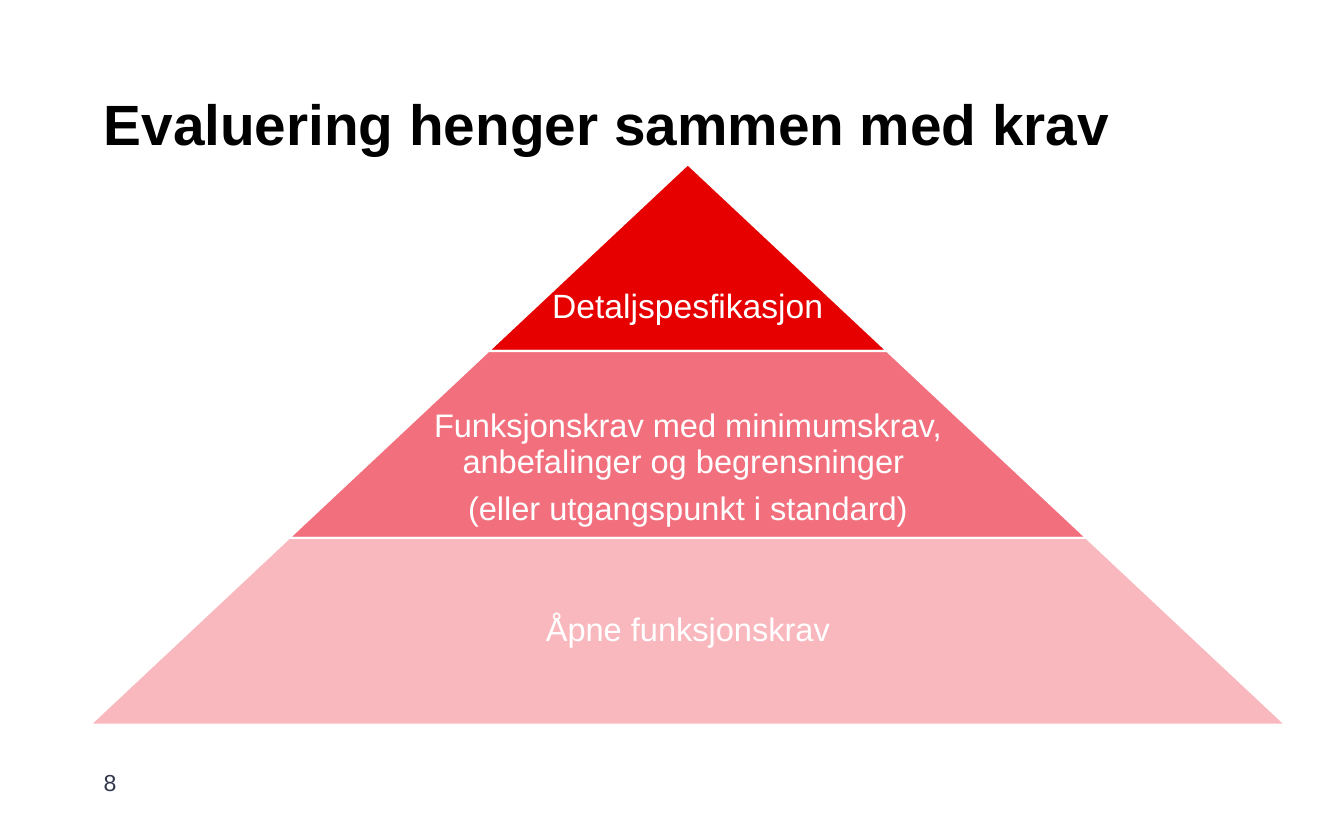
from dataclasses import dataclass

from pptx import Presentation
from pptx.dml.color import RGBColor
from pptx.enum.shapes import MSO_SHAPE
from pptx.enum.text import MSO_ANCHOR, MSO_AUTO_SIZE, PP_ALIGN
from pptx.slide import Slide
from pptx.text.text import TextFrame
from pptx.util import Cm, Pt

COLOURS = {
    "title": "000000",
    "number": "32374B",
    "white": "FFFFFF",
    "detail": "E60000",
    "functional": "F2707D",
    "open": "F8B8BE",
}
FONT = "Arial"
LEFT = 3.02
PYRAMID_TOP = 5.51
PYRAMID_WIDTH = 40.13
TIER_HEIGHT = 6.27
TITLE_MARGINS = (0.46, 0.23, 0.46, 0.23)


@dataclass(frozen=True)
class Tier:
    lines: tuple[str, ...]
    colour: str
    size: int
    text_share: float  # text width as a share of the tier width
    bottom_margin: float


TIERS = (
    Tier(("Detaljspesfikasjon",), "detail", 32, 1, 0.84),
    Tier(
        (
            "Funksjonskrav med minimumskrav, anbefalinger og begrensninger ",
            "(eller utgangspunkt i standard)",
        ),
        "functional", 31, 0.65, 0.33,
    ),
    Tier(("Åpne funksjonskrav",), "open", 31, 0.65, 2.57),
)


def colour(name: str) -> RGBColor:
    return RGBColor.from_string(COLOURS[name])


def set_frame(frame: TextFrame, anchor: MSO_ANCHOR,
              margins: tuple[float, float, float, float]) -> None:
    """Set wrapping, anchor and margins (left, top, right, bottom in cm)."""
    frame.word_wrap = True
    frame.auto_size = MSO_AUTO_SIZE.NONE
    frame.vertical_anchor = anchor
    (frame.margin_left, frame.margin_top,
     frame.margin_right, frame.margin_bottom) = map(Cm, margins)


def write_lines(frame: TextFrame, lines: tuple[str, ...], size: int, ink: str,
                align: PP_ALIGN = PP_ALIGN.LEFT, bold: bool = False,
                spacing: float = 1.0) -> None:
    for index, line in enumerate(lines):
        para = frame.add_paragraph() if index else frame.paragraphs[0]
        para.alignment = align
        para.line_spacing = spacing
        para.space_before = Pt(12 if index else 0)
        span = para.add_run()
        span.text = line
        span.font.name = FONT
        span.font.size = Pt(size)
        span.font.bold = bold
        span.font.color.rgb = colour(ink)


def add_title(page: Slide, text: str) -> None:
    title = page.shapes.title
    title.left, title.top, title.width, title.height = map(
        Cm, (LEFT, 2.54, 39.83, 2.97))
    set_frame(title.text_frame, MSO_ANCHOR.BOTTOM, TITLE_MARGINS)
    write_lines(title.text_frame, (text,), 54, "title", bold=True)


def add_tier(page: Slide, tier: Tier, index: int) -> None:
    width = PYRAMID_WIDTH * (index + 1) / len(TIERS)
    slope = PYRAMID_WIDTH / len(TIERS) / 2
    centre = LEFT + PYRAMID_WIDTH / 2
    top = PYRAMID_TOP + index * TIER_HEIGHT

    band = page.shapes.add_shape(
        MSO_SHAPE.TRAPEZOID, Cm(centre - width / 2), Cm(top),
        Cm(width), Cm(TIER_HEIGHT))
    band.adjustments[0] = slope / TIER_HEIGHT
    band.shadow.inherit = False
    band.fill.solid()
    band.fill.fore_color.rgb = colour(tier.colour)
    band.line.color.rgb = colour("white")
    band.line.width = Pt(2)

    text_width = width * tier.text_share
    box = page.shapes.add_textbox(
        Cm(centre - text_width / 2), Cm(top), Cm(text_width), Cm(TIER_HEIGHT))
    set_frame(box.text_frame, MSO_ANCHOR.BOTTOM,
              (0.1, 0.1, 0.1, tier.bottom_margin))
    write_lines(box.text_frame, tier.lines, tier.size, "white",
                PP_ALIGN.CENTER, spacing=0.9)


def add_page_number(page: Slide, number: str) -> None:
    box = page.shapes.add_textbox(Cm(LEFT), Cm(25.65), Cm(2), Cm(1.2))
    set_frame(box.text_frame, MSO_ANCHOR.MIDDLE, TITLE_MARGINS)
    write_lines(box.text_frame, (number,), 22, "number")


def main() -> None:
    deck = Presentation()
    deck.slide_width, deck.slide_height = Cm(45.11), Cm(28.19)
    page = deck.slides.add_slide(deck.slide_layouts.get_by_name("Title Only"))
    add_title(page, "Evaluering henger sammen med krav")
    for index, tier in enumerate(TIERS):
        add_tier(page, tier, index)
    add_page_number(page, "8")
    deck.save("out.pptx")


if __name__ == "__main__":
    main()
